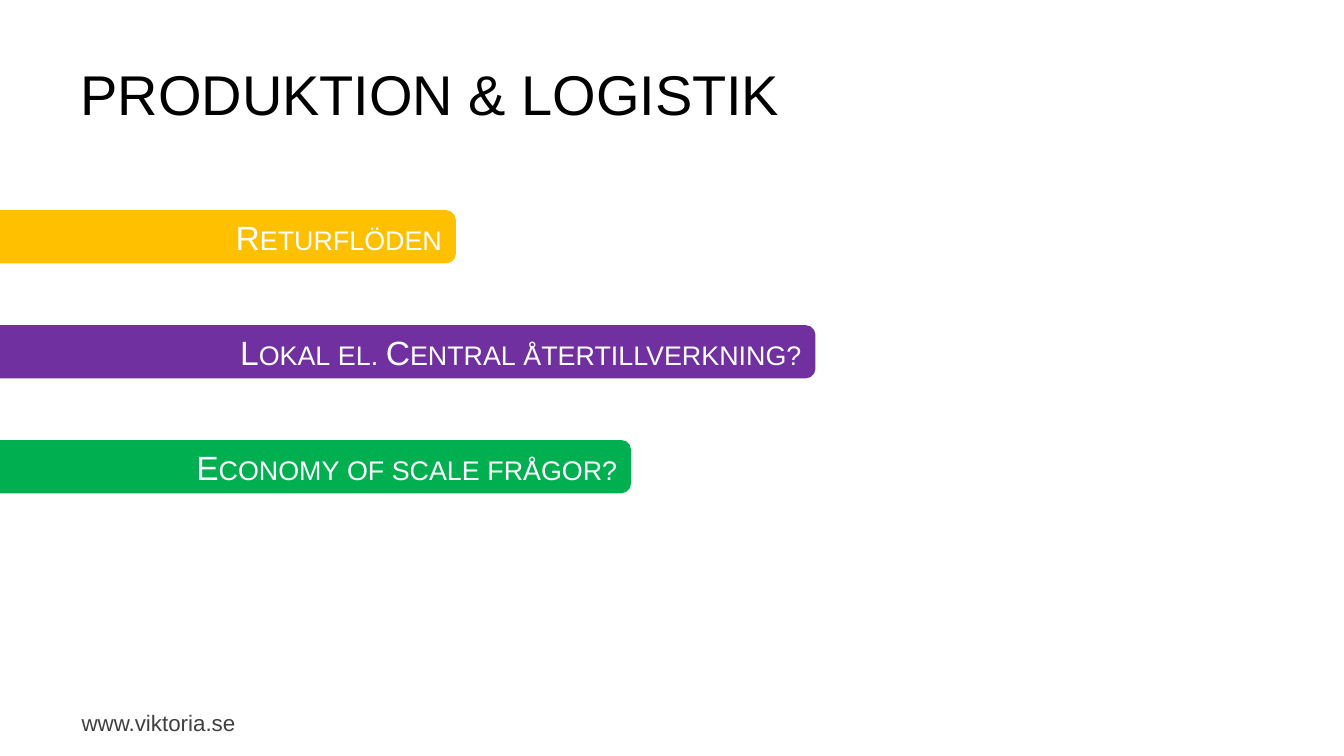
from dataclasses import dataclass

from pptx import Presentation
from pptx.dml.color import RGBColor
from pptx.enum.shapes import MSO_SHAPE
from pptx.enum.text import MSO_ANCHOR, PP_ALIGN
from pptx.slide import Slide
from pptx.text.text import TextFrame
from pptx.util import Inches, Length, Pt

ROUNDED_RECTANGLE = MSO_SHAPE.ROUNDED_RECTANGLE
TOP, MIDDLE = MSO_ANCHOR.TOP, MSO_ANCHOR.MIDDLE
LEFT, RIGHT = PP_ALIGN.LEFT, PP_ALIGN.RIGHT

BLACK = RGBColor(0x00, 0x00, 0x00)
GRAY = RGBColor(0x40, 0x40, 0x40)
WHITE = RGBColor(0xFF, 0xFF, 0xFF)
YELLOW = RGBColor(0xFF, 0xC0, 0x00)
PURPLE = RGBColor(0x70, 0x30, 0xA0)
GREEN = RGBColor(0x00, 0xB0, 0x50)

FONT = "Arial"
GRID = 0.1  # inches per grid column and row
FIRST_BAR_ROW, BAR_ROW_STEP, BAR_ROWS = 21, 11.4, 5


@dataclass
class Label:
    text: str
    column: float
    row: float
    columns: float
    rows: float
    size: int
    color: RGBColor
    anchor: MSO_ANCHOR
    wrap: bool


@dataclass
class Bar:
    text: str
    start: float
    end: float
    color: RGBColor


LABELS = [
    Label("www.viktoria.se", 6.8, 69.7, 18.2, 4, 16, GRAY, TOP, False),
    Label("PRODUKTION & LOGISTIK", 6.7, 3, 120.1, 12.5, 40, BLACK, MIDDLE, True),
]
BARS = [
    Bar("Returflöden", -42.8, 45.1, YELLOW),
    Bar("Lokal el. Central återtillverkning?", -24.7, 80.8, PURPLE),
    Bar("Economy of scale frågor?", -35.2, 62.5, GREEN),
]


def grid(cells: float) -> Length:
    return Inches(cells * GRID)


def write(frame: TextFrame, text: str, size: int, color: RGBColor,
          alignment: PP_ALIGN, small_caps: bool = False) -> None:
    frame.text = text
    paragraph = frame.paragraphs[0]
    paragraph.alignment = alignment
    run = paragraph.runs[0]
    run.font.name = FONT
    run.font.size = Pt(size)
    run.font.color.rgb = color
    if small_caps:
        run._r.get_or_add_rPr().set("cap", "small")


def draw_label(slide: Slide, label: Label) -> None:
    shape = slide.shapes.add_textbox(grid(label.column), grid(label.row),
                                     grid(label.columns), grid(label.rows))
    frame = shape.text_frame
    frame.word_wrap = label.wrap
    frame.vertical_anchor = label.anchor
    frame.margin_left = frame.margin_right = Inches(0.13)
    frame.margin_top = frame.margin_bottom = Inches(0.07)
    write(frame, label.text, label.size, label.color, LEFT)


def draw_bar(slide: Slide, bar: Bar, index: int) -> None:
    shape = slide.shapes.add_shape(
        ROUNDED_RECTANGLE, grid(bar.start), grid(FIRST_BAR_ROW + index * BAR_ROW_STEP),
        grid(bar.end - bar.start), grid(BAR_ROWS))
    shape.shadow.inherit = False
    shape.fill.solid()
    shape.fill.fore_color.rgb = bar.color
    shape.line.color.rgb = bar.color
    shape.line.width = Pt(2)
    shape.text_frame.word_wrap = True
    shape.text_frame.vertical_anchor = MIDDLE
    write(shape.text_frame, bar.text, 24, WHITE, RIGHT, small_caps=True)


def main() -> None:
    presentation = Presentation()
    presentation.slide_width = Inches(13.34)
    presentation.slide_height = Inches(7.5)
    slide = presentation.slides.add_slide(presentation.slide_layouts[6])

    # Web address and title
    for label in LABELS:
        draw_label(slide, label)

    # Bars entering from the left edge
    for index, bar in enumerate(BARS):
        draw_bar(slide, bar, index)

    presentation.save("out.pptx")


if __name__ == "__main__":
    main()
